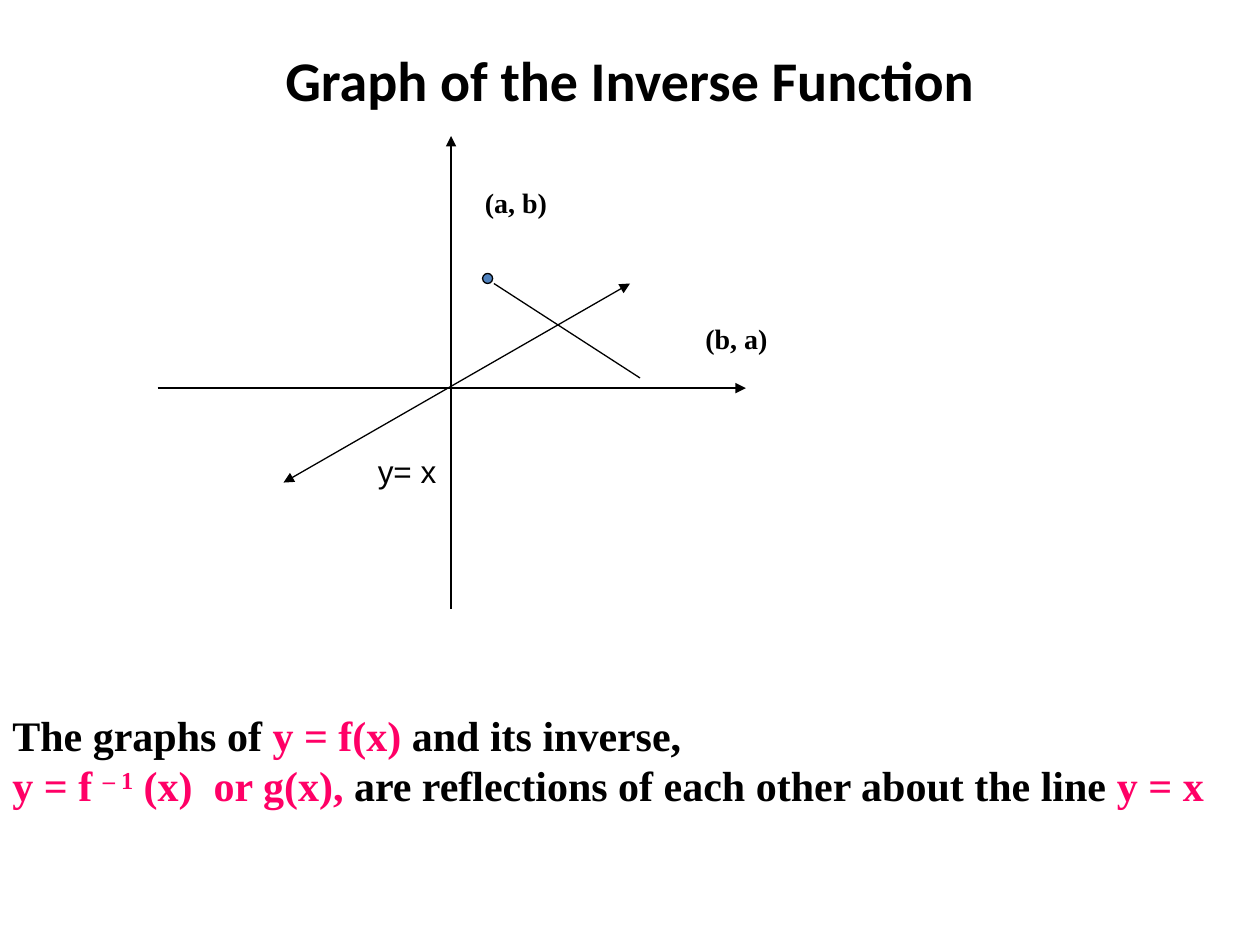
"""Build a slide on the graph of an inverse function."""
from lxml import etree
from pptx import Presentation
from pptx.dml.color import RGBColor
from pptx.enum import shapes, text
from pptx.oxml import ns
from pptx.util import Inches, Pt

BLACK = RGBColor(0x00, 0x00, 0x00)
PINK = RGBColor(0xFF, 0x00, 0x66)
BLUE = RGBColor(0x4F, 0x81, 0xBD)
SERIF = "Times New Roman"


def add_line(start, end, arrows=()):
    line = slide.shapes.add_connector(
        shapes.MSO_CONNECTOR.STRAIGHT, *map(Inches, start + end))
    line.line.color.rgb = BLACK
    line.line.width = Pt(0.75)
    for arrow in arrows:
        etree.SubElement(line.line._get_or_add_ln(), ns.qn(arrow), type="triangle")
    etree.SubElement(line._element.spPr, ns.qn("a:effectLst"))


def add_text(box, paragraphs, font, size, bold=True, wrap=True):
    frame = slide.shapes.add_textbox(*map(Inches, box)).text_frame
    frame.word_wrap = wrap
    for index, pieces in enumerate(paragraphs):
        paragraph = frame.add_paragraph() if index else frame.paragraphs[0]
        for words, color in pieces:
            run = paragraph.add_run()
            run.text = words
            run.font.name = font
            run.font.size = Pt(size)
            run.font.bold = bold
            run.font.color.rgb = color
    return frame


deck = Presentation()
deck.slide_width, deck.slide_height = Inches(10), Inches(7.5)
slide = deck.slides.add_slide(deck.slide_layouts[6])

title = add_text((0.75, 0, 8.5, 1.25),
                 [[("Graph of the Inverse Function", BLACK)]], "Calibri", 32)
title.vertical_anchor = text.MSO_ANCHOR.MIDDLE
title.paragraphs[0].alignment = text.PP_ALIGN.CENTER

add_line((1.25, 3.08), (5.92, 3.08), ["a:tailEnd"])
add_line((3.58, 4.83), (3.58, 1.08), ["a:tailEnd"])

point = slide.shapes.add_shape(
    shapes.MSO_SHAPE.OVAL, *map(Inches, (3.83, 2.17, 0.08, 0.08)))
point.shadow.inherit = False
point.fill.solid()
point.fill.fore_color.rgb = BLUE
point.line.color.rgb = BLACK
point.line.width = Pt(0.75)

add_line((3.92, 2.25), (5.08, 3))
add_text((3.75, 1.42, 1.25, 0.37), [[("(a, b)", BLACK)]], SERIF, 16)
add_text((5.5, 2.5, 0.7, 0.37), [[("(b, a)", BLACK)]], SERIF, 16, wrap=False)

statement = add_text((0, 5.58, 10, 0.9), [
    [("The graphs of ", BLACK), ("y = f(x)", PINK), (" and its inverse,", BLACK)],
    [("y = f ", PINK), ("– 1", PINK), (" (x)  or g(x),", PINK),
     (" are reflections of each other about the line ", BLACK), ("y = x", PINK)],
], SERIF, 24)
exponent = statement.paragraphs[1].runs[1]
exponent.font._element.set("baseline", "30000")

add_text((2.9, 3.54, 0.67, 0.4), [[("y= x", BLACK)]], "Arial", 18,
         bold=False, wrap=False)
add_line((2.25, 3.83), (5, 2.25), ["a:headEnd", "a:tailEnd"])

deck.save("out.pptx")
